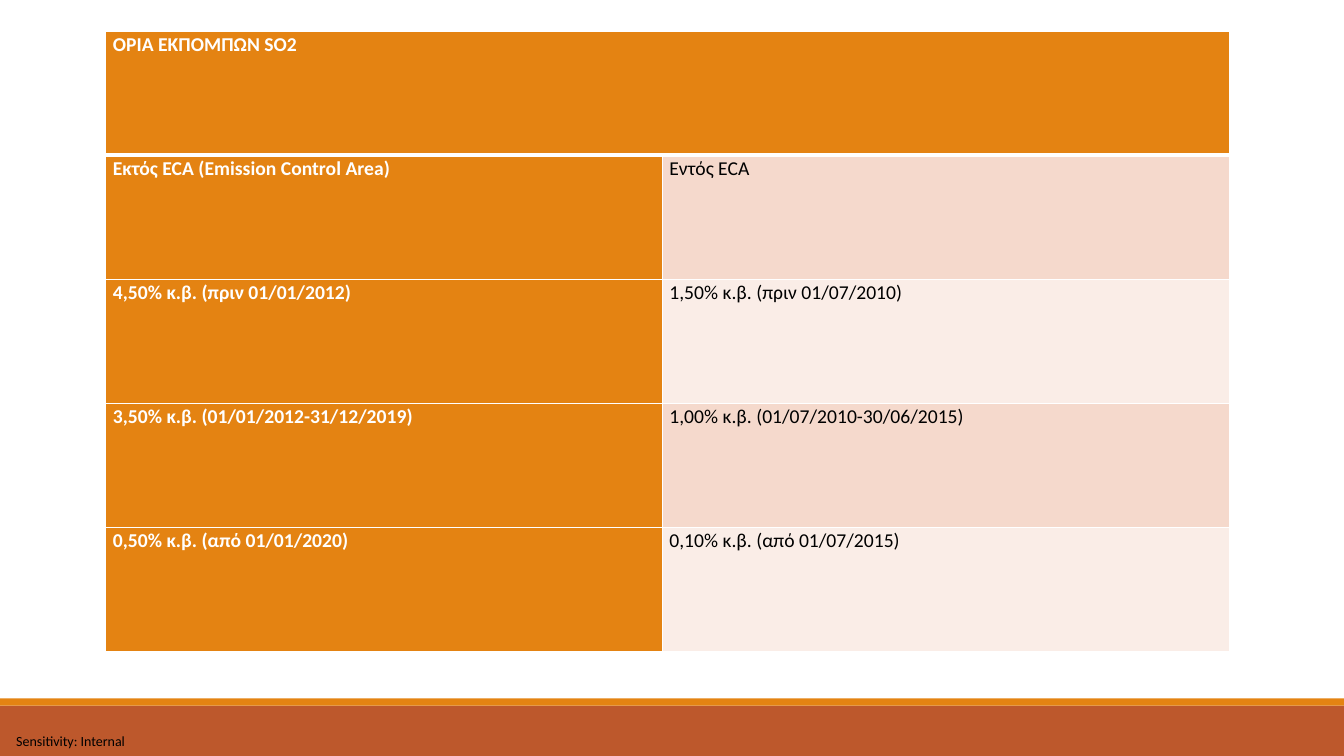
import pptx
import pptx.util
import pptx.dml.color
import pptx.enum.shapes
import pptx.enum.text
import pptx.oxml
import pptx.oxml.ns

Inches, Pt = pptx.util.Inches, pptx.util.Pt
ALIGN = pptx.enum.text.PP_ALIGN

COLORS = {
    "orange": "E48312",
    "rust": "BD582C",
    "band_dark": "F5D9CC",
    "band_light": "FAEDE7",
    "white": "FFFFFF",
    "black": "000000",
}

HEADING = "ΟΡΙΑ ΕΚΠΟΜΠΩΝ SO2"
LIMITS = [
    ("Εκτός ECA (Emission Control Area)", "Εντός ECA"),
    ("4,50% κ.β. (πριν 01/01/2012)", "1,50% κ.β. (πριν 01/07/2010)"),
    ("3,50% κ.β. (01/01/2012-31/12/2019)", "1,00% κ.β. (01/07/2010-30/06/2015)"),
    ("0,50% κ.β. (από 01/01/2020)", "0,10% κ.β. (από 01/07/2015)"),
]
COL_WIDTHS = [5.52, 5.63]
ROW_HEIGHT = 1.23
CELL_FORMAT = {
    "margin_left": Inches(0.07), "margin_right": Inches(0.07),
    "margin_top": 0, "margin_bottom": 0,
}
PARAGRAPH_FORMAT = {
    "alignment": ALIGN.JUSTIFY, "line_spacing": 1.07, "space_after": Pt(8),
}


def rgb(name):
    return pptx.dml.color.RGBColor.from_string(COLORS[name])


def set_attrs(obj, values):
    for name, value in values.items():
        setattr(obj, name, value)


def write(p, text, size, color, bold=False):
    r = p.add_run()
    r.text = text
    set_attrs(r.font, {"name": "Calibri", "size": Pt(size), "bold": bold})
    r.font.color.rgb = rgb(color)


def add_bar(s, top, height, color):
    sp = s.shapes.add_shape(pptx.enum.shapes.MSO_SHAPE.RECTANGLE,
                            0, Inches(top), Inches(13.33), Inches(height))
    sp.shadow.inherit = False
    sp.fill.solid()
    sp.fill.fore_color.rgb = rgb(color)
    sp.line.fill.background()


def add_label(s, text, left, top, width, height):
    sp = s.shapes.add_textbox(Inches(left), Inches(top), Inches(width), Inches(height))
    tf = sp.text_frame
    set_attrs(tf, {
        "word_wrap": True, "vertical_anchor": pptx.enum.text.MSO_ANCHOR.MIDDLE,
        "margin_left": 0, "margin_right": 0, "margin_top": 0, "margin_bottom": 0,
    })
    p = tf.paragraphs[0]
    p.alignment = ALIGN.CENTER
    write(p, text, 10, "black")


def set_borders(cell, widths):
    tc_pr = cell._tc.get_or_add_tcPr()
    for side, width in widths.items():
        tc_pr.append(pptx.oxml.parse_xml(
            f'<a:ln{side} {pptx.oxml.ns.nsdecls("a")} w="{Pt(width)}"><a:solidFill>'
            f'<a:srgbClr val="{COLORS["white"]}"/></a:solidFill></a:ln{side}>'))


def format_cell(cell, row, col):
    # The heading is set off from the rows below by a thicker rule
    set_borders(cell, {"L": 1, "R": 1, "T": 3 if row == 1 else 1,
                       "B": 3 if row == 0 else 1})
    is_header = row == 0 or col == 0
    fill = "orange" if is_header else ("band_light", "band_dark")[row % 2]
    cell.fill.solid()
    cell.fill.fore_color.rgb = rgb(fill)
    set_attrs(cell, CELL_FORMAT)
    return {"color": "white" if is_header else "black", "bold": is_header}


def add_limits_table(s, left, top):
    rows = [(HEADING, "")] + LIMITS
    table = s.shapes.add_table(
        len(rows), len(COL_WIDTHS), Inches(left), Inches(top),
        Inches(sum(COL_WIDTHS)), Inches(ROW_HEIGHT * len(rows))).table
    for column, width in zip(table.columns, COL_WIDTHS):
        column.width = Inches(width)
    for i, texts in enumerate(rows):
        table.rows[i].height = Inches(ROW_HEIGHT)
        for j, text in enumerate(texts):
            cell = table.cell(i, j)
            font = format_cell(cell, i, j)
            if text:
                p = cell.text_frame.paragraphs[0]
                set_attrs(p, PARAGRAPH_FORMAT)
                write(p, text, 14, **font)
    table.cell(0, 0).merge(table.cell(0, 1))


def main():
    prs = pptx.Presentation()
    set_attrs(prs, {"slide_width": Inches(13.33), "slide_height": Inches(7.5)})
    s = prs.slides.add_slide(prs.slide_layouts[6])

    # Footer bars and sensitivity label
    add_bar(s, 7, 0.5, "rust")
    add_bar(s, 6.93, 0.07, "orange")
    add_label(s, "Sensitivity: Internal", 0, 7.21, 1.4, 0.29)

    # Emission limits
    add_limits_table(s, 1.05, 0.31)

    prs.save("out.pptx")


if __name__ == "__main__":
    main()
